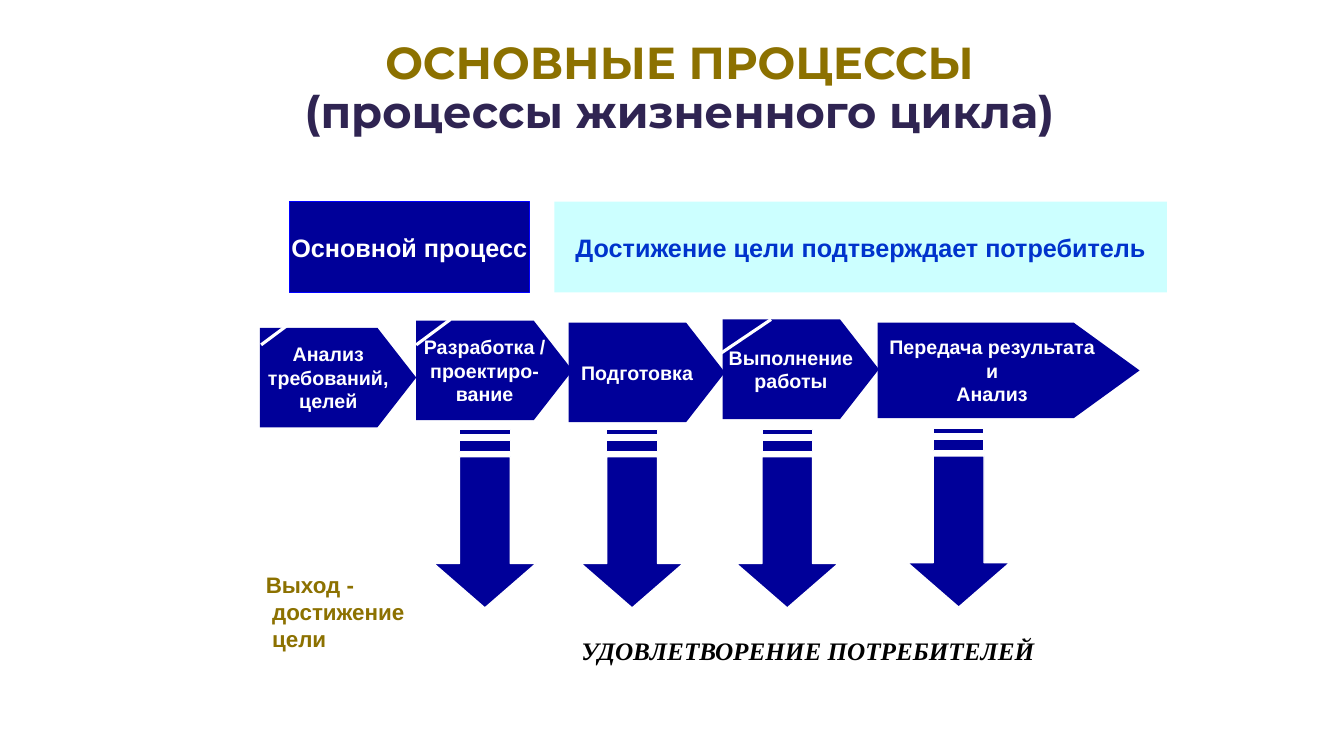
from lxml import etree
from pptx import Presentation
from pptx import util as u
from pptx.dml.color import RGBColor
from pptx.enum import shapes, text
from pptx.oxml.ns import qn

COLORS = {
    "navy": "000099", "blue": "0000FF", "royal": "0033CC", "cyan": "CCFFFF",
    "gold": "8C7100", "plum": "2F2452", "white": "FFFFFF", "black": "000000",
}
KINDS = shapes.MSO_SHAPE
ALIGN = text.PP_ALIGN


def rgb(name):
    return RGBColor.from_string(COLORS[name])


class ProcessSlide:
    """Draws on one slide; all lengths are in centimetres."""

    def __init__(self, slide):
        self.shapes = slide.shapes

    def fill_text(self, frame, lines, color, size, font="Arial", align=ALIGN.CENTER,
                  italic=False, spacing=None):
        """Set one paragraph per line, all in the same style."""
        for i, line in enumerate(lines):
            paragraph = frame.paragraphs[0] if i == 0 else frame.add_paragraph()
            paragraph.alignment = align
            paragraph.line_spacing = spacing
            run = paragraph.add_run()
            run.text = line
            style = {"name": font, "size": u.Pt(size), "bold": True, "italic": italic}
            for key, value in style.items():
                setattr(run.font, key, value)
            run.font.color.rgb = rgb(color)

    def paint(self, shape, fill, line=None):
        shape.shadow.inherit = False
        shape.fill.solid()
        shape.fill.fore_color.rgb = rgb(fill)
        if line:
            shape.line.color.rgb = rgb(line)
            shape.line.width = u.Pt(1)
        else:
            shape.line.fill.background()

    def block(self, kind, box, lines, fill, color="white", size=18, line=None, point=None):
        shape = self.shapes.add_shape(kind, *map(u.Cm, box))
        self.paint(shape, fill, line)
        if point is not None:
            shape.adjustments[0] = point
        frame = shape.text_frame
        frame.word_wrap = False
        frame.vertical_anchor = text.MSO_ANCHOR.MIDDLE
        self.fill_text(frame, lines, color, size)

    def label(self, box, lines, color, size, wrap=True, **style):
        frame = self.shapes.add_textbox(*map(u.Cm, box)).text_frame
        frame.word_wrap = wrap
        frame.auto_size = text.MSO_AUTO_SIZE.SHAPE_TO_FIT_TEXT
        self.fill_text(frame, lines, color, size, **style)
        return frame

    def striped_arrow(self, center, top):
        """Down arrow with two stripes above its shaft."""
        shaft, head = 0.64, 1.29
        contours = [
            [(head, 3.38), (shaft, 3.38), (shaft, 0.69), (-shaft, 0.69),
             (-shaft, 3.38), (-head, 3.38), (0, 4.5)],
        ]
        for upper, lower in ((0.28, 0.56), (0, 0.14)):
            contours.append([(shaft, upper), (-shaft, upper),
                             (-shaft, lower), (shaft, lower)])
        placed = [[(u.Cm(center + x), u.Cm(top + y)) for x, y in contour]
                  for contour in contours]
        builder = self.shapes.build_freeform(*placed[0][0])
        for i, (start, *rest) in enumerate(placed):
            if i:
                builder.move_to(*start)
            builder.add_line_segments(rest, close=True)
        self.paint(builder.convert_to_shape(), "navy", "white")

    def stroke(self, x1, y1, x2, y2):
        line = self.shapes.add_connector(
            shapes.MSO_CONNECTOR.STRAIGHT, *map(u.Cm, (x1, y1, x2, y2)))
        line.line.color.rgb = rgb("white")
        line.line.width = u.Pt(2.25)
        etree.SubElement(line._element.spPr, qn("a:effectLst"))


def main():
    deck = Presentation()
    deck.slide_width, deck.slide_height = u.Cm(33.87), u.Cm(19.05)
    page = ProcessSlide(deck.slides.add_slide(deck.slide_layouts[6]))

    # Title
    title = page.label((6.73, 0.91, 20.8, 2.72),
                       ["ОСНОВНЫЕ ПРОЦЕССЫ", "(процессы жизненного цикла)"],
                       "gold", 32, font="Montserrat", spacing=0.9)
    title.paragraphs[1].runs[0].font.color.rgb = rgb("plum")

    # Process and its goal
    page.block(KINDS.RECTANGLE, (7.29, 5.08, 6.05, 2.29), ["Основной процесс"],
               "navy", line="blue")
    page.block(KINDS.RECTANGLE, (13.97, 5.08, 15.44, 2.29),
               ["Достижение цели подтверждает потребитель"], "cyan", "royal")

    # Output arrows
    for center, top in ((12.22, 10.82), (15.93, 10.82), (19.84, 10.82), (24.16, 10.8)):
        page.striped_arrow(center, top)

    # Output caption
    output = page.label((6.45, 14.27, 5.51, 1.57), ["Выход -", "достижение цели"],
                        "gold", 16, wrap=False, align=ALIGN.LEFT)
    output.paragraphs[1]._p.get_or_add_pPr().set("marL", str(u.Cm(0.16)))

    # Life cycle stages
    stages = [
        (6.55, 8.26, ["Анализ", "требований,", "целей"]),
        (10.49, 8.08, ["Разработка /", "проектиро-", "вание"]),
        (14.33, 8.13, ["Подготовка"]),
        (18.21, 8.05, ["Выполнение", "работы"]),
    ]
    for left, top, lines in stages:
        page.block(KINDS.PENTAGON, (left, top, 3.94, 2.51), lines, "navy",
                   size=14, point=0.39)
    page.block(KINDS.PENTAGON, (22.12, 8.13, 6.6, 2.41),
               ["Передача результата", "и", "Анализ"], "navy", size=14, point=0.69)

    # Cut corners of the stages
    for x1, y1, x2 in ((6.58, 8.69, 7.44), (10.49, 8.69, 11.35), (18.14, 8.92, 19.43)):
        page.stroke(x1, y1, x2, 8.05)

    # Result
    page.label((14.4, 15.88, 12.27, 1.02), ["УДОВЛЕТВОРЕНИЕ ПОТРЕБИТЕЛЕЙ"],
               "black", 18, font="Times New Roman", align=ALIGN.LEFT, italic=True)

    deck.save("out.pptx")


if __name__ == "__main__":
    main()
